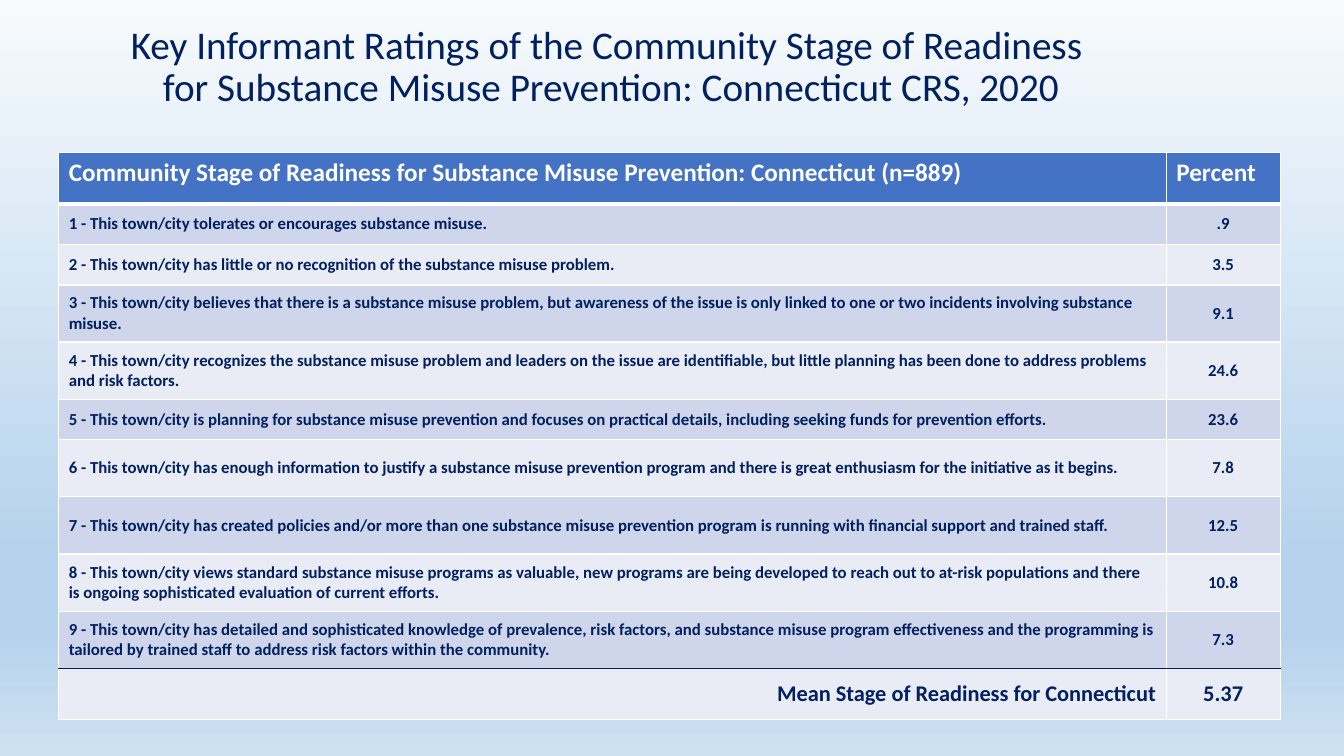
from lxml import etree
from pptx import Presentation
from pptx.dml.color import RGBColor
from pptx.enum.text import MSO_ANCHOR, MSO_AUTO_SIZE, PP_ALIGN
from pptx.oxml.ns import qn
from pptx.util import Cm, Pt

LEFT, CENTER, RIGHT = PP_ALIGN.LEFT, PP_ALIGN.CENTER, PP_ALIGN.RIGHT
TOP, MIDDLE = MSO_ANCHOR.TOP, MSO_ANCHOR.MIDDLE
NO_AUTOFIT = MSO_AUTO_SIZE.NONE

COLORS = {
    "navy": "002060", "white": "FFFFFF", "header": "4472C4",
    "odd": "CFD5EA", "even": "E9EBF5",
    "sky_top": "F7FAFD", "sky_deep": "B5D2EC", "sky_bottom": "CEE1F2",
}
SKY_STOPS = [(0, "sky_top"), (74, "sky_deep"), (83, "sky_deep"), (100, "sky_bottom")]

TITLE = ("Key Informant Ratings of the Community Stage of Readiness \v"
         "for Substance Misuse Prevention: Connecticut CRS, 2020")
HEADER = ("Community Stage of Readiness for Substance Misuse Prevention: "
          "Connecticut (n=889)", "Percent")
SHORT, TALL, END = 1.02, 1.44, 1.3  # row heights in cm
STAGES = [
    ("tolerates or encourages substance misuse.", ".9", SHORT),
    ("has little or no recognition of the substance misuse problem.", "3.5", SHORT),
    ("believes that there is a substance misuse problem, but awareness of the issue "
     "is only linked to one or two incidents involving substance misuse.", "9.1", TALL),
    ("recognizes the substance misuse problem and leaders on the issue are identifiable, "
     "but little planning has been done to address problems and risk factors.", "24.6", TALL),
    ("is planning for substance misuse prevention and focuses on practical details, "
     "including seeking funds for prevention efforts.", "23.6", SHORT),
    ("has enough information to justify a substance misuse prevention program and there "
     "is great enthusiasm for the initiative as it begins.", "7.8", TALL),
    ("has created policies and/or more than one substance misuse prevention program is "
     "running with financial support and trained staff.", "12.5", TALL),
    ("views standard substance misuse programs as valuable, new programs are being "
     "developed to reach out to at-risk populations and there is ongoing sophisticated "
     "evaluation of current efforts.", "10.8", TALL),
    ("has detailed and sophisticated knowledge of prevalence, risk factors, and substance "
     "misuse program effectiveness and the programming is tailored by trained staff to "
     "address risk factors within the community.", "7.3", TALL),
]
MEAN = ("Mean Stage of Readiness for Connecticut", "5.37")


class SlideBuilder:
    def __init__(self, deck, font_name):
        self.font_name = font_name
        self.page = deck.slides.add_slide(deck.slide_layouts[5])

    def apply(self, target, formats):
        for name, value in formats.items():
            setattr(target, name, value)

    def style(self, para, size, color, bold=False, align=LEFT):
        para.alignment = align
        self.apply(para.font, {"name": self.font_name, "size": Pt(size), "bold": bold})
        para.font.color.rgb = RGBColor.from_string(COLORS[color])

    def background(self, stops):
        fill = self.page.background.fill
        fill.gradient()
        fill.gradient_angle = 270
        stop_list = next(self.page.element.iter(qn("a:gsLst")))
        for stop in list(stop_list):
            stop_list.remove(stop)
        for percent, color in stops:
            stop = etree.SubElement(stop_list, qn("a:gs"), pos=str(percent * 1000))
            etree.SubElement(stop, qn("a:srgbClr"), val=COLORS[color])

    def title(self, text, left, top, width, height):
        box = self.page.shapes.title
        self.apply(box, {"left": Cm(left), "top": Cm(top),
                         "width": Cm(width), "height": Cm(height)})
        frame = box.text_frame
        frame.text = text
        self.apply(frame, {"word_wrap": True, "auto_size": NO_AUTOFIT,
                           "vertical_anchor": MIDDLE})
        para = frame.paragraphs[0]
        para.line_spacing = 0.9
        self.style(para, 28, "navy", align=CENTER)

    def table(self, left, top, widths, heights):
        grid = self.page.shapes.add_table(
            len(heights), len(widths), Cm(left), Cm(top),
            Cm(sum(widths)), Cm(sum(heights))).table
        for column, width in zip(grid.columns, widths):
            column.width = Cm(width)
        for row, height in zip(grid.rows, heights):
            row.height = Cm(height)
        return grid

    def cell(self, cell, text, fill, size, color="navy", align=LEFT,
             anchor=MIDDLE, tight=False, edges=None):
        cell.text = text
        cell.vertical_anchor = anchor
        if tight:
            self.apply(cell, {"margin_left": Cm(0.13), "margin_right": Cm(0.13),
                              "margin_top": 0, "margin_bottom": 0})
        self.style(cell.text_frame.paragraphs[0], size, color, True, align)
        cell.fill.solid()
        cell.fill.fore_color.rgb = RGBColor.from_string(COLORS[fill])
        self.borders(cell, edges or {})

    def borders(self, cell, edges):
        # Border lines come before the fill in the cell properties
        properties = cell._tc.get_or_add_tcPr()
        for index, side in enumerate("LRTB"):
            color, width = edges.get(side, ("white", 1))
            line = etree.Element(qn(f"a:ln{side}"), w=str(Pt(width)))
            solid = etree.SubElement(line, qn("a:solidFill"))
            etree.SubElement(solid, qn("a:srgbClr"), val=COLORS[color])
            properties.insert(index, line)


def main():
    deck = Presentation()
    deck.slide_width, deck.slide_height = Cm(33.87), Cm(19.05)
    slide = SlideBuilder(deck, "Calibri")
    slide.background(SKY_STOPS)
    slide.title(TITLE, 2.33, 0.5, 26.13, 2.42)

    heights = [END] + [height for _, _, height in STAGES] + [END]
    grid = slide.table(1.48, 3.84, [27.91, 2.87], heights)
    last = len(STAGES)

    # Header row
    for column, text in enumerate(HEADER):
        slide.cell(grid.cell(0, column), text, "header", 18, "white", anchor=TOP,
                   edges={"B": ("white", 3)})

    # Stages of readiness, in bands
    for number, (sentence, percent, _) in enumerate(STAGES, 1):
        fill = "odd" if number % 2 else "even"
        edges = {}
        if number == 1:
            edges = {"T": ("white", 3)}
        elif number == last:
            edges = {"B": ("navy", 1)}
        slide.cell(grid.cell(number, 0), f"{number} - This town/city {sentence}",
                   fill, 12, edges=edges)
        slide.cell(grid.cell(number, 1), percent, fill, 12, align=CENTER,
                   tight=True, edges=edges)

    # Mean row
    for column, (text, align) in enumerate(zip(MEAN, (RIGHT, CENTER))):
        slide.cell(grid.cell(last + 1, column), text, "even", 16, align=align,
                   edges={"T": ("navy", 1)})

    deck.save("out.pptx")


if __name__ == "__main__":
    main()
